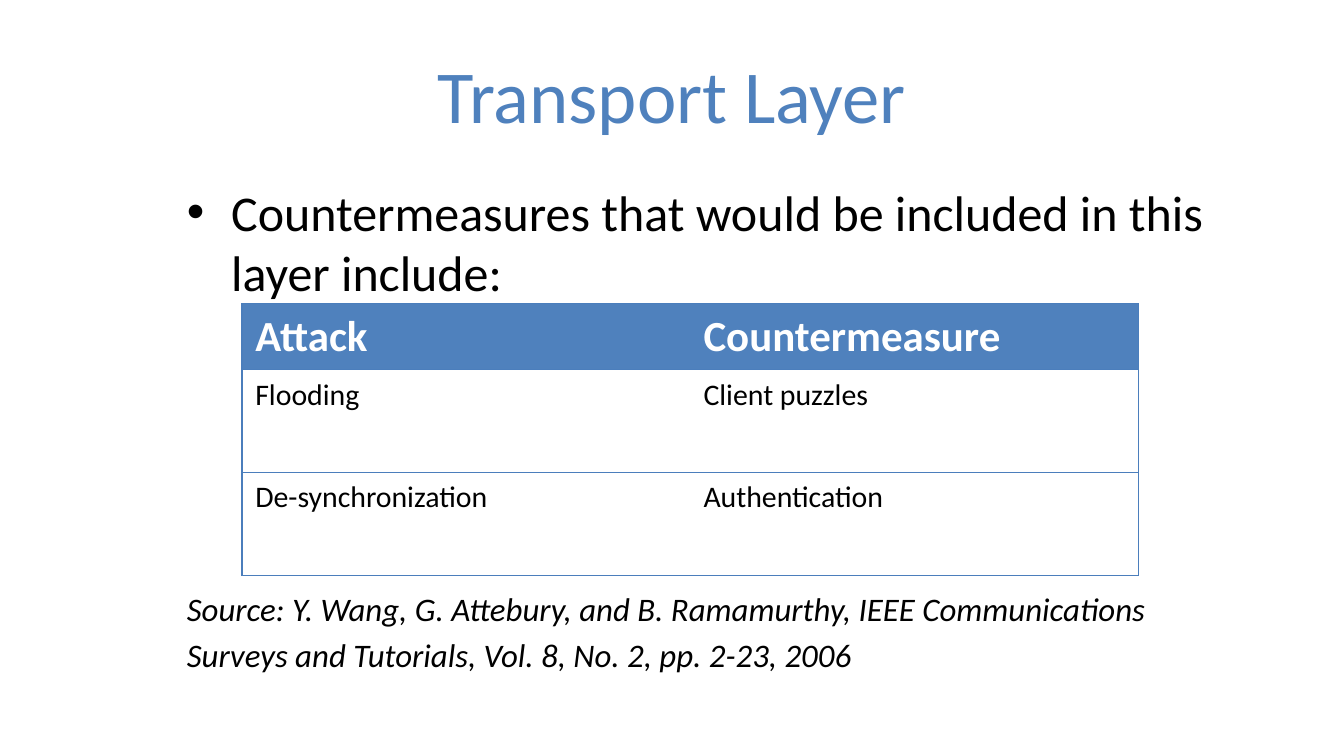
from typing import NamedTuple

from lxml.etree import SubElement
from pptx import Presentation
from pptx.dml.color import RGBColor
from pptx.enum.text import MSO_ANCHOR as Anchor, MSO_AUTO_SIZE as AutoSize, PP_ALIGN as Align
from pptx.oxml.ns import qn
from pptx.util import Inches, Pt

BLUE = RGBColor(0x4F, 0x81, 0xBD)
BORDER = RGBColor(0x4B, 0x7E, 0xBC)
BLACK = RGBColor(0, 0, 0)
WHITE = RGBColor(0xFF, 0xFF, 0xFF)
FONT = "Calibri"
BULLET_INDENT = Inches(0.33)
SLIDE_WIDTH = Inches(10)
SLIDE_HEIGHT = SLIDE_WIDTH * 9 // 16


class Box(NamedTuple):
    left: float
    top: float
    width: float
    height: float

    def lengths(self):
        return [Inches(side) for side in self]


class Defense(NamedTuple):
    attack: str
    countermeasure: str


TITLE_BOX = Box(0.5, 0.23, 9, 0.94)
BODY_BOX = Box(1.3, 1.31, 8.2, 3.71)
TABLE_BOX = Box(1.8, 2.26, 6.67, 2.02)
HEADER_HEIGHT = 0.49

HEADER = Defense("Attack", "Countermeasure")
DEFENSES = [
    Defense("Flooding", "Client puzzles"),
    Defense("De-synchronization", "Authentication"),
]
SOURCE_LINES = [
    "Source: Y. Wang, G. Attebury, and B. Ramamurthy, IEEE Communications",
    "Surveys and Tutorials, Vol. 8, No. 2, pp. 2-23, 2006",
]


def write(paragraph, text: str, *, size: float, color=BLACK, bold=False,
          italic=False, align=Align.LEFT, before: float = 0, bullet: str = ""):
    paragraph.text = text
    paragraph.alignment = align
    paragraph.space_before = Pt(before)
    properties = paragraph._p.get_or_add_pPr()
    indent = BULLET_INDENT if bullet else 0
    properties.set("marL", str(indent))
    properties.set("indent", str(-indent))
    if bullet:
        SubElement(properties, qn("a:buChar"), char=bullet)
    else:
        SubElement(properties, qn("a:buNone"))
    font = paragraph.runs[0].font
    font.name, font.size, font.bold, font.italic = FONT, Pt(size), bold, italic
    font.color.rgb = color


def place(placeholder, box: Box, anchor):
    """Move a placeholder and return its text frame, ready for writing."""
    placeholder.left, placeholder.top, placeholder.width, placeholder.height = box.lengths()
    frame = placeholder.text_frame
    frame.word_wrap = True
    frame.auto_size = AutoSize.NONE
    frame.vertical_anchor = anchor
    frame.margin_left = frame.margin_right = Inches(0.09)
    frame.margin_top = frame.margin_bottom = Inches(0.04)
    return frame


def set_borders(cell, visible_sides: str):
    properties = cell._tc.get_or_add_tcPr()
    for side in "LRTB":
        line = SubElement(properties, qn(f"a:ln{side}"), w=str(Pt(0.75)))
        if side in visible_sides:
            fill = SubElement(line, qn("a:solidFill"))
            SubElement(fill, qn("a:srgbClr"), val=str(BORDER))
        else:
            SubElement(line, qn("a:noFill"))


def add_defense_table(slide, box: Box):
    rows = [HEADER, *DEFENSES]
    columns = len(HEADER)
    table = slide.shapes.add_table(len(rows), columns, *box.lengths()).table
    table.horz_banding = table.first_row = False
    for column in table.columns:
        column.width = Inches(box.width / columns)
    for r, defense in enumerate(rows):
        is_header = r == 0
        height = HEADER_HEIGHT if is_header else (box.height - HEADER_HEIGHT) / len(DEFENSES)
        table.rows[r].height = Inches(height)
        for c, text in enumerate(defense):
            cell = table.cell(r, c)
            set_borders(cell, "TB" + ("L" if c == 0 else "") + ("R" if c == columns - 1 else ""))
            if is_header:
                cell.fill.solid()
                cell.fill.fore_color.rgb = BLUE
            else:
                cell.fill.background()
            write(cell.text_frame.paragraphs[0], text, size=23 if is_header else 16,
                  color=WHITE if is_header else BLACK, bold=is_header)


def main():
    deck = Presentation()
    deck.slide_width, deck.slide_height = SLIDE_WIDTH, SLIDE_HEIGHT
    slide = deck.slides.add_slide(deck.slide_layouts[1])

    title = place(slide.shapes.title, TITLE_BOX, Anchor.MIDDLE)
    write(title.paragraphs[0], "Transport Layer", size=40, color=BLUE, align=Align.CENTER)

    body = place(slide.placeholders[1], BODY_BOX, Anchor.TOP)
    write(body.paragraphs[0], "Countermeasures that would be included in this layer include:",
          size=26.8, bullet="•")
    table_gap = 154
    for line, before in zip(SOURCE_LINES, (table_gap, 3.5)):
        write(body.add_paragraph(), line, size=17.6, italic=True, before=before)

    add_defense_table(slide, TABLE_BOX)
    deck.save("out.pptx")


if __name__ == "__main__":
    main()
